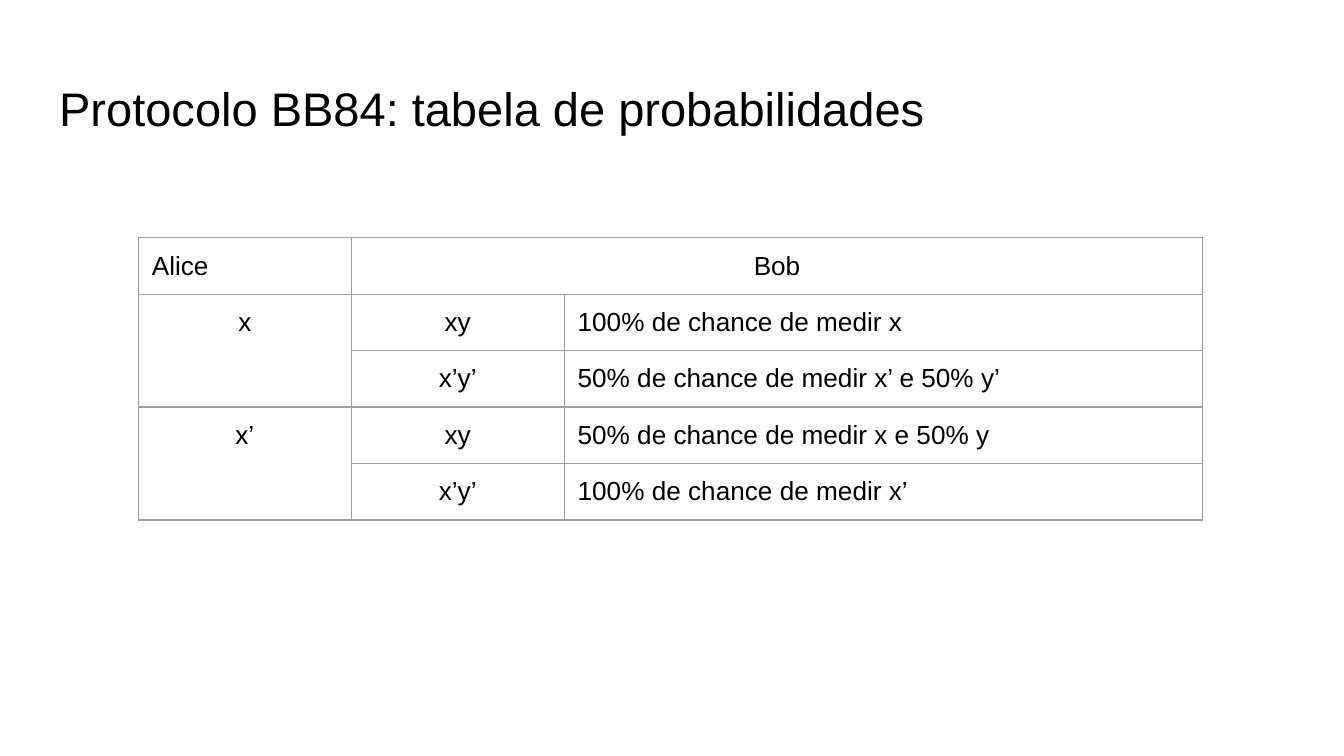
from lxml import etree
from pptx import Presentation
from pptx.dml.color import RGBColor
from pptx.enum.text import MSO_ANCHOR, PP_ALIGN
from pptx.oxml.ns import qn
from pptx.util import Inches, Pt

LEFT, CENTER = PP_ALIGN.LEFT, PP_ALIGN.CENTER
TOP = MSO_ANCHOR.TOP

COLORS = {"text": "000000", "border": "9E9E9E"}
FONT = "Arial"
BORDER_PT = 0.75
SLIDE_W = 10
SLIDE_H = SLIDE_W * 9 / 16

TITLE = "Protocolo BB84: tabela de probabilidades"
ROWS, COLS = 5, 5
ROW_H = 0.42
TABLE_W = 7.92

# row, column, rows spanned, columns spanned, alignment, text
CELLS = [
    (0, 0, 1, 1, LEFT, "Alice"),
    (0, 1, 1, 4, CENTER, "Bob"),
    (1, 0, 2, 1, CENTER, "x"),
    (1, 1, 1, 1, CENTER, "xy"),
    (1, 2, 1, 3, LEFT, "100% de chance de medir x"),
    (2, 1, 1, 1, CENTER, "x’y’"),
    (2, 2, 1, 3, LEFT, "50% de chance de medir x’ e 50% y’"),
    (3, 0, 2, 1, CENTER, "x’"),
    (3, 1, 1, 1, CENTER, "xy"),
    (3, 2, 1, 3, LEFT, "50% de chance de medir x e 50% y"),
    (4, 1, 1, 1, CENTER, "x’y’"),
    (4, 2, 1, 3, LEFT, "100% de chance de medir x’"),
]


def write(tf, text, size=14, align=LEFT):
    p = tf.paragraphs[0]
    p.alignment = align
    r = p.add_run()
    r.text = text
    r.font.name = FONT
    r.font.size = Pt(size)
    r.font.color.rgb = RGBColor.from_string(COLORS["text"])


def set_margins(box):
    box.margin_left = box.margin_right = Inches(0.1)
    box.margin_top = box.margin_bottom = Inches(0.1)
    box.vertical_anchor = TOP


def set_borders(cell):
    tc_pr = cell._tc.get_or_add_tcPr()
    for side in ("lnL", "lnR", "lnT", "lnB"):
        ln = etree.SubElement(tc_pr, qn(f"a:{side}"), w=str(Pt(BORDER_PT)))
        fill = etree.SubElement(ln, qn("a:solidFill"))
        etree.SubElement(fill, qn("a:srgbClr"), val=COLORS["border"])


def add_title(s):
    title = s.shapes.title
    title.left, title.top = Inches(0.34), Inches(0.49)
    title.width, title.height = Inches(9.32), Inches(0.63)
    set_margins(title.text_frame)
    title.text_frame.word_wrap = True
    write(title.text_frame, TITLE, size=25.2)


def add_probability_table(s):
    table = s.shapes.add_table(
        ROWS, COLS, Inches(1.03), Inches(1.77),
        Inches(TABLE_W), Inches(ROW_H * ROWS)).table
    table.first_row = table.horz_banding = False
    for column in table.columns:
        column.width = Inches(TABLE_W / COLS)
    for row in table.rows:
        row.height = Inches(ROW_H)
    for cell in table.iter_cells():
        set_margins(cell)
        set_borders(cell)
        cell.fill.background()
    for row, col, row_span, col_span, align, text in CELLS:
        cell = table.cell(row, col)
        if row_span * col_span > 1:
            cell.merge(table.cell(row + row_span - 1, col + col_span - 1))
        write(cell.text_frame, text, align=align)


def main():
    prs = Presentation()
    prs.slide_width, prs.slide_height = Inches(SLIDE_W), Inches(SLIDE_H)
    s = prs.slides.add_slide(prs.slide_layouts[5])
    add_title(s)
    add_probability_table(s)
    prs.save("out.pptx")


if __name__ == "__main__":
    main()
